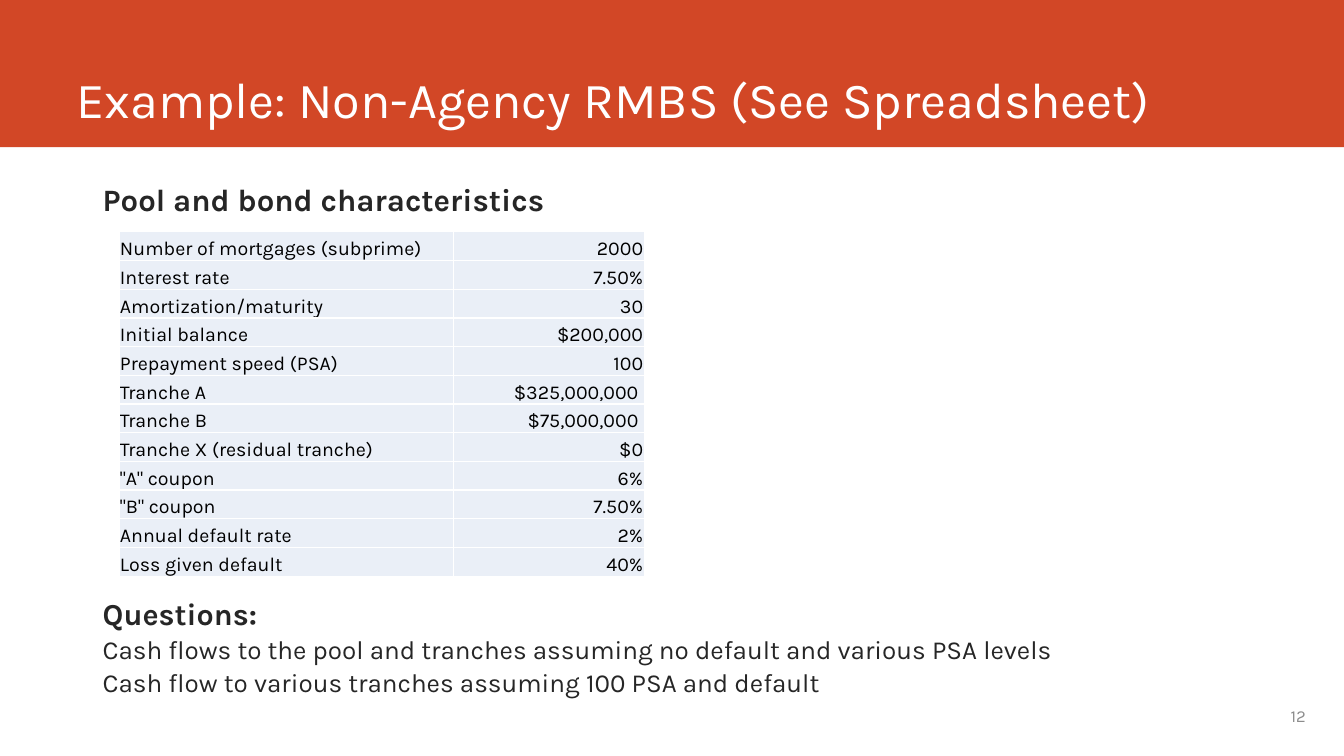
from dataclasses import dataclass

from lxml import etree
from pptx import Presentation
from pptx.dml.color import RGBColor
from pptx.enum.shapes import MSO_SHAPE
from pptx.enum.text import MSO_ANCHOR, PP_ALIGN
from pptx.oxml.ns import qn
from pptx.util import Pt

RECTANGLE = MSO_SHAPE.RECTANGLE
LEFT, RIGHT = PP_ALIGN.LEFT, PP_ALIGN.RIGHT
TOP, MIDDLE, BOTTOM = MSO_ANCHOR.TOP, MSO_ANCHOR.MIDDLE, MSO_ANCHOR.BOTTOM

EMU_PER_PX = 9144
FONT = "Karla"
COLOURS = {
    "banner": "D24726",
    "white": "FFFFFF",
    "text": "262626",
    "number": "8C8C8C",
    "table_text": "000000",
    "cell": "EAEFF7",
}


@dataclass
class Line:
    text: str
    size: float
    colour: str = "text"
    bold: bool = False
    align: PP_ALIGN = LEFT
    spacing: float = 0.8
    before: int = 0
    after: int = 6


@dataclass
class TextBlock:
    left: int
    top: int
    width: int
    height: int
    lines: list[Line]
    anchor: MSO_ANCHOR = TOP


@dataclass
class PoolFact:
    label: str
    value: str


TEXT_BLOCKS = [
    TextBlock(66, 0, 1176, 132, [
        Line("Example: Non-Agency RMBS (See Spreadsheet)", 36, "white",
             spacing=1, after=0),
    ], BOTTOM),
    TextBlock(92, 181, 1150, 50, [
        Line("Pool and bond characteristics", 22.2, bold=True, before=6),
    ]),
    TextBlock(92, 592, 1150, 108, [
        Line("Questions:", 21.7, bold=True, before=6),
        Line("Cash flows to the pool and tranches assuming no default and various PSA levels", 18.6),
        Line("Cash flow to various tranches assuming 100 PSA and default", 18.6),
    ]),
    TextBlock(947, 690, 358, 40, [
        Line("12", 12, "number", align=RIGHT, spacing=1, after=0),
    ], MIDDLE),
]

POOL_FACTS = [
    PoolFact("Number of mortgages (subprime)", "2000"),
    PoolFact("Interest rate", "7.50%"),
    PoolFact("Amortization/maturity", "30"),
    PoolFact("Initial balance", "$200,000"),
    PoolFact("Prepayment speed (PSA)", "100"),
    PoolFact("Tranche A", "$325,000,000 "),
    PoolFact("Tranche B", "$75,000,000 "),
    PoolFact("Tranche X (residual tranche)", "$0"),
    PoolFact('"A" coupon', "6%"),
    PoolFact('"B" coupon', "7.50%"),
    PoolFact("Annual default rate", "2%"),
    PoolFact("Loss given default", "40%"),
]
TABLE_LEFT, TABLE_TOP, TABLE_HEIGHT = 118, 230, 342
COLUMN_WIDTHS = [332, 189]


def px(length: int) -> int:
    return length * EMU_PER_PX


def colour(name: str) -> RGBColor:
    return RGBColor.from_string(COLOURS[name])


def write(para, text: str, *, size: float, colour_name: str,
          bold: bool = False, align: PP_ALIGN = LEFT) -> None:
    para.alignment = align
    span = para.add_run()
    span.text = text
    span.font.name = FONT
    span.font.size = Pt(size)
    span.font.bold = bold
    span.font.color.rgb = colour(colour_name)


def draw_banner(page) -> None:
    banner = page.shapes.add_shape(RECTANGLE, 0, 0, px(1333), px(146))
    banner.shadow.inherit = False
    banner.fill.solid()
    banner.fill.fore_color.rgb = colour("banner")
    banner.line.fill.background()


def draw_text(page, block: TextBlock) -> None:
    box = page.shapes.add_textbox(px(block.left), px(block.top),
                                  px(block.width), px(block.height))
    frame = box.text_frame
    frame.word_wrap = True
    frame.vertical_anchor = block.anchor
    for index, line in enumerate(block.lines):
        para = frame.add_paragraph() if index else frame.paragraphs[0]
        para.line_spacing = line.spacing
        para.space_before = Pt(line.before)
        para.space_after = Pt(line.after)
        write(para, line.text, size=line.size, colour_name=line.colour,
              bold=line.bold, align=line.align)


def add_borders(cell) -> None:
    properties = cell._tc.get_or_add_tcPr()
    for side in ("lnL", "lnR", "lnT", "lnB"):
        border = etree.SubElement(properties, qn(f"a:{side}"), w=str(Pt(1)))
        fill = etree.SubElement(border, qn("a:solidFill"))
        etree.SubElement(fill, qn("a:srgbClr"), val=COLOURS["white"])


def fill_cell(cell, text: str, align: PP_ALIGN) -> None:
    add_borders(cell)
    cell.fill.solid()
    cell.fill.fore_color.rgb = colour("cell")
    cell.vertical_anchor = BOTTOM
    cell.margin_left = cell.margin_right = cell.margin_top = px(1)
    cell.margin_bottom = 0
    write(cell.text_frame.paragraphs[0], text, size=14,
          colour_name="table_text", align=align)


def draw_pool_table(page, facts: list[PoolFact]) -> None:
    table = page.shapes.add_table(
        len(facts), len(COLUMN_WIDTHS), px(TABLE_LEFT), px(TABLE_TOP),
        px(sum(COLUMN_WIDTHS)), px(TABLE_HEIGHT)).table
    table.first_row = False
    table.horz_banding = False
    for column, width in zip(table.columns, COLUMN_WIDTHS):
        column.width = px(width)
    for row, fact in zip(table.rows, facts):
        fill_cell(row.cells[0], fact.label, LEFT)
        fill_cell(row.cells[1], fact.value, RIGHT)


def main() -> None:
    deck = Presentation()
    deck.slide_width = px(1333)
    deck.slide_height = px(750)
    page = deck.slides.add_slide(deck.slide_layouts[6])
    draw_banner(page)
    for block in TEXT_BLOCKS:
        draw_text(page, block)
    draw_pool_table(page, POOL_FACTS)
    deck.save("out.pptx")


if __name__ == "__main__":
    main()
